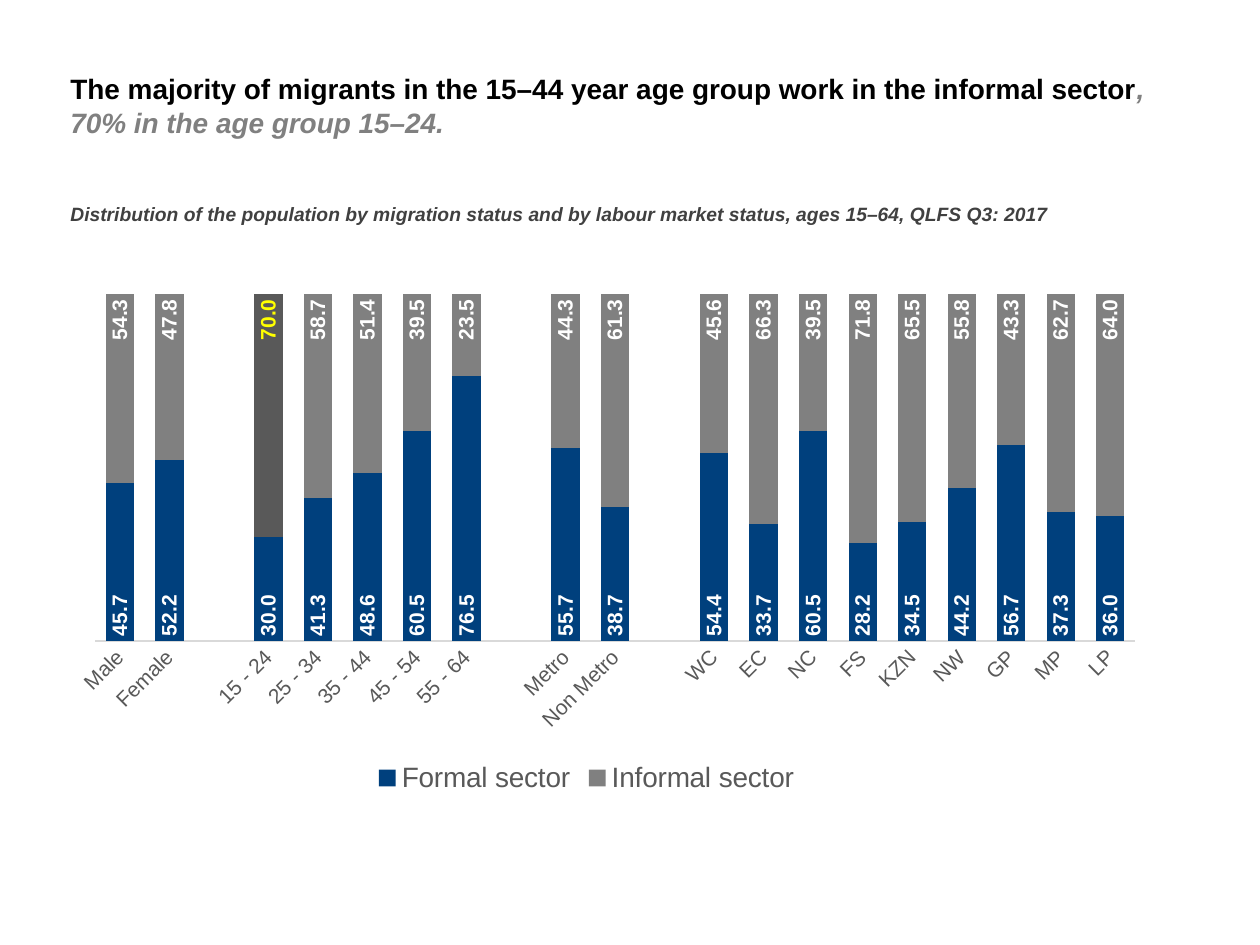
from dataclasses import dataclass

from pptx import Presentation
from pptx import util as u
from pptx.chart.data import CategoryChartData
from pptx.dml.color import RGBColor
from pptx.enum import chart as charts
from pptx.oxml import parse_xml
from pptx.oxml.ns import nsdecls, qn

PX = 9144  # 100 px to the inch
FONT = "Arial"
BLACK = RGBColor(0x00, 0x00, 0x00)
WHITE = RGBColor(0xFF, 0xFF, 0xFF)
YELLOW = RGBColor(0xFF, 0xFF, 0x00)
NAVY = RGBColor(0x00, 0x40, 0x7D)
GREY = RGBColor(0x80, 0x80, 0x80)
DARK_GREY = RGBColor(0x59, 0x59, 0x59)
CAPTION_GREY = RGBColor(0x40, 0x40, 0x40)
AXIS_GREY = RGBColor(0xD9, 0xD9, 0xD9)


@dataclass(frozen=True)
class Run:
    text: str
    size: int
    color: RGBColor
    italic: bool = False


@dataclass(frozen=True)
class Box:
    left: int
    top: int
    width: int
    height: int

    def emu(self) -> list[int]:
        return [n * PX for n in (self.left, self.top, self.width, self.height)]


@dataclass(frozen=True)
class Sector:
    name: str
    color: RGBColor
    label_position: charts.XL_LABEL_POSITION


# Share of formal employment by group; None separates the groups
FORMAL_SHARES = [
    ("Male", 45.7), ("Female", 52.2), ("", None),
    ("15 - 24", 30.0), ("25 - 34", 41.3), ("35 - 44", 48.6),
    ("45 - 54", 60.5), ("55 - 64", 76.5), ("", None),
    ("Metro", 55.7), (" Non Metro", 38.7), ("", None),
    ("WC", 54.4), ("EC", 33.7), ("NC", 60.5), ("FS", 28.2), ("KZN", 34.5),
    ("NW", 44.2), ("GP", 56.7), ("MP", 37.3), ("LP", 36.0),
]
HIGHLIGHT = 3  # ages 15 - 24
SECTORS = [
    Sector("Formal sector", NAVY, charts.XL_LABEL_POSITION.INSIDE_BASE),
    Sector("Informal sector", GREY, charts.XL_LABEL_POSITION.INSIDE_END),
]


def style_font(font, size: int, color: RGBColor, bold: bool = False) -> None:
    font.name = FONT
    font.size = u.Pt(size)
    font.bold = bold
    font.color.rgb = color


def add_text(slide, box: Box, runs: list[Run]) -> None:
    frame = slide.shapes.add_textbox(*box.emu()).text_frame
    frame.word_wrap = True
    for item in runs:
        run = frame.paragraphs[0].add_run()
        run.text = item.text
        style_font(run.font, item.size, item.color, bold=True)
        run.font.italic = item.italic


def rotate_text(element, degrees: int) -> None:
    for body in element.iter(qn("a:bodyPr")):
        body.set("rot", str(degrees * 60000))
        body.set("vert", "horz")


def set_plot_area(chart, x: float, y: float, w: float, h: float) -> None:
    plot_area = chart.element.find(".//" + qn("c:plotArea"))
    for old in plot_area.findall(qn("c:layout")):
        plot_area.remove(old)
    plot_area.insert(0, parse_xml(
        f'<c:layout {nsdecls("c")}><c:manualLayout>'
        '<c:layoutTarget val="inner"/><c:xMode val="edge"/><c:yMode val="edge"/>'
        f'<c:x val="{x}"/><c:y val="{y}"/><c:w val="{w}"/><c:h val="{h}"/>'
        '</c:manualLayout></c:layout>'))


def style_series(series, sector: Sector) -> None:
    series.format.fill.solid()
    series.format.fill.fore_color.rgb = sector.color
    labels = series.data_labels
    labels.show_value = True
    labels.number_format = "0.0"
    labels.number_format_is_linked = False
    labels.position = sector.label_position
    style_font(labels.font, 12, WHITE, bold=True)


def highlight_point(series, index: int, sector: Sector) -> None:
    point = series.points[index]
    point.format.fill.solid()
    point.format.fill.fore_color.rgb = DARK_GREY
    style_font(point.data_label.font, 12, YELLOW, bold=True)
    point.data_label.position = sector.label_position
    label_index = series._element.find(".//" + qn("c:dLbl")).find(qn("c:idx"))
    label_index.addnext(parse_xml(
        f'<c:numFmt {nsdecls("c")} formatCode="0.0" sourceLinked="0"/>'))


def add_sector_chart(slide, box: Box) -> None:
    formal = [share for _, share in FORMAL_SHARES]
    informal = [None if share is None else round(100 - share, 1) for share in formal]
    data = CategoryChartData(number_format="0.0")
    data.categories = [label for label, _ in FORMAL_SHARES]
    for sector, values in zip(SECTORS, (formal, informal)):
        data.add_series(sector.name, values)
    chart = slide.shapes.add_chart(
        charts.XL_CHART_TYPE.COLUMN_STACKED, *box.emu(), data).chart
    style_font(chart.font, 12, DARK_GREY)
    chart.has_title = False
    set_plot_area(chart, 0.07, 0.04, 0.91, 0.66)

    # Columns and their labels
    plot = chart.plots[0]
    plot.vary_by_categories = False
    plot.gap_width = 75
    plot.overlap = 100
    for series, sector in zip(plot.series, SECTORS):
        style_series(series, sector)
    highlight_point(plot.series[1], HIGHLIGHT, SECTORS[1])
    for series in plot.series:
        rotate_text(series._element, -90)

    # Axes
    groups, shares = chart.category_axis, chart.value_axis
    for axis in (groups, shares):
        axis.major_tick_mark = axis.minor_tick_mark = charts.XL_TICK_MARK.NONE
        axis.has_major_gridlines = False
        style_font(axis.tick_labels.font, 12, DARK_GREY)
    groups.format.line.color.rgb = AXIS_GREY
    groups.format.line.width = u.Pt(0.75)
    rotate_text(groups._element, -45)
    shares.minimum_scale, shares.maximum_scale = 0, 100
    shares.tick_label_position = charts.XL_TICK_LABEL_POSITION.NONE
    shares.format.line.fill.background()

    # Legend
    chart.has_legend = True
    chart.legend.position = charts.XL_LEGEND_POSITION.BOTTOM
    chart.legend.include_in_layout = False
    style_font(chart.legend.font, 16, DARK_GREY)


def main() -> None:
    presentation = Presentation()
    presentation.slide_width = 1000 * PX
    presentation.slide_height = 750 * PX
    slide = presentation.slides.add_slide(presentation.slide_layouts[6])

    add_sector_chart(slide, Box(12, 217, 907, 417))
    # Caption and headline
    add_text(slide, Box(46, 156, 809, 29), [
        Run("Distribution of the population by migration status and by labour "
            "market status, ages 15–64, QLFS Q3: 2017", 11, CAPTION_GREY, True)])
    add_text(slide, Box(46, 52, 911, 64), [
        Run("The majority of migrants in the 15–44 year age group work in the "
            "informal sector", 16, BLACK),
        Run(", 70% in the age group 15–24.", 16, GREY, True)])

    presentation.save("out.pptx")


if __name__ == "__main__":
    main()
